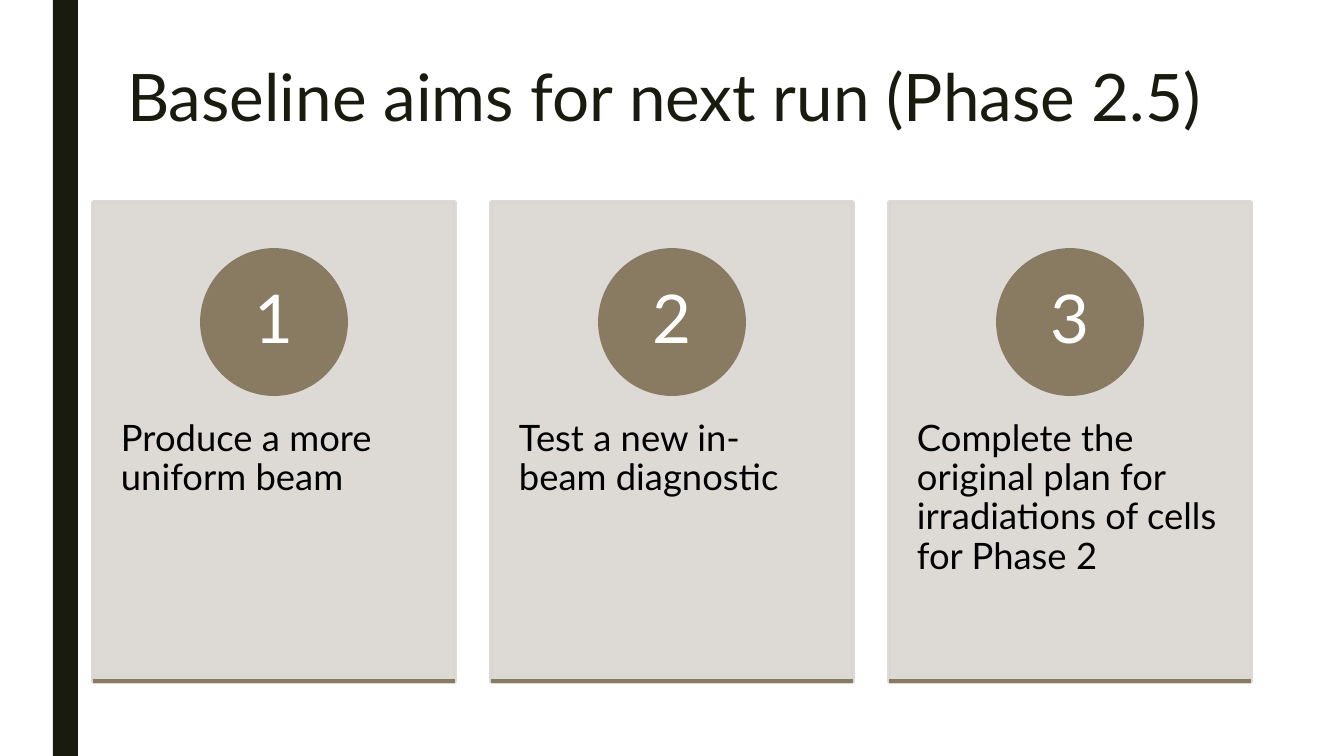
import pptx
import pptx.util
import pptx.dml.color
import pptx.enum.shapes
import pptx.enum.text
import pptx.oxml
import pptx.oxml.ns
import lxml.etree

# Content
TITLE = "Baseline aims for next run (Phase 2.5) "
AIMS = [
    "Produce a more uniform beam",
    "Test a new in-beam diagnostic",
    "Complete the original plan for irradiations of cells for Phase 2",
]
COLOURS = {
    "dark": "191B0E",
    "card": "DAD7D2",
    "accent": "897B61",
    "body": "000000",
    "number": "FFFFFF",
}
FONT = "Lato"

# Layout in px
PAGE_WIDTH, PAGE_HEIGHT = 1344, 756
CARD_LEFT, CARD_TOP, CARD_WIDTH, CARD_HEIGHT = 93, 202, 362, 480
CARD_PITCH = 398
CIRCLE_TOP, CIRCLE_SIZE = 250, 144
BODY_TOP, BODY_HEIGHT = 384, 288
LINE_WIDTH = pptx.util.Pt(2.75)

SHAPES = pptx.enum.shapes.MSO_SHAPE
ANCHORS = pptx.enum.text.MSO_ANCHOR
ALIGNMENTS = pptx.enum.text.PP_ALIGN


def px(length):
    return pptx.util.Emu(round(length * 914400 / 100.8))


def colour(name):
    return pptx.dml.color.RGBColor.from_string(COLOURS[name])


def add_filled(page, kind, left, top, width, height, fill, outlined=True):
    box = page.shapes.add_shape(kind, px(left), px(top), px(width), px(height))
    box.shadow.inherit = False
    box.fill.solid()
    box.fill.fore_color.rgb = colour(fill)
    if outlined:
        box.line.color.rgb = colour(fill)
        box.line.width = LINE_WIDTH
    else:
        box.line.fill.background()
    return box


def set_opacity(box, percent):
    for value in box._element.spPr.iter(pptx.oxml.ns.qn("a:srgbClr")):
        alpha = lxml.etree.SubElement(value, pptx.oxml.ns.qn("a:alpha"))
        alpha.set("val", str(percent * 1000))


def write(box, text, size, name, align, anchor, insets, spacing=0.9):
    frame = box.text_frame
    frame.word_wrap = True
    frame.auto_size = pptx.enum.text.MSO_AUTO_SIZE.NONE
    frame.vertical_anchor = anchor
    frame.margin_left = frame.margin_right = px(insets[0])
    frame.margin_top = frame.margin_bottom = px(insets[1])
    para = frame.paragraphs[0]
    para.alignment = align
    para.line_spacing = spacing
    span = para.add_run()
    span.text = text
    span.font.size = pptx.util.Pt(size)
    span.font.name = FONT
    span.font.color.rgb = colour(name)


def add_card(page, number, text):
    left = CARD_LEFT + (number - 1) * CARD_PITCH
    card = add_filled(page, SHAPES.RECTANGLE, left, CARD_TOP,
                      CARD_WIDTH, CARD_HEIGHT, "card")
    set_opacity(card, 90)

    body = page.shapes.add_textbox(px(left), px(BODY_TOP),
                                   px(CARD_WIDTH), px(BODY_HEIGHT))
    write(body, text, 26, "body", ALIGNMENTS.LEFT, ANCHORS.TOP, (28, 36))

    circle_left = left + (CARD_WIDTH - CIRCLE_SIZE) / 2
    circle = add_filled(page, SHAPES.OVAL, circle_left, CIRCLE_TOP,
                        CIRCLE_SIZE, CIRCLE_SIZE, "accent")
    write(circle, str(number), 48, "number", ALIGNMENTS.CENTER,
          ANCHORS.MIDDLE, (11, 1))

    bottom = px(CARD_TOP + CARD_HEIGHT - 1)
    rule = page.shapes.add_connector(
        pptx.enum.shapes.MSO_CONNECTOR.STRAIGHT,
        px(left), bottom, px(left + CARD_WIDTH), bottom)
    rule.line.color.rgb = colour("accent")
    rule.line.width = LINE_WIDTH
    lxml.etree.SubElement(rule._element.spPr, pptx.oxml.ns.qn("a:effectLst"))


def main():
    deck = pptx.Presentation()
    deck.slide_width, deck.slide_height = px(PAGE_WIDTH), px(PAGE_HEIGHT)
    page = deck.slides.add_slide(deck.slide_layouts[5])

    # Side bar
    add_filled(page, SHAPES.RECTANGLE, 53, 0, 25, PAGE_HEIGHT, "dark",
               outlined=False)

    # Title
    title = page.shapes.title
    title.left, title.top = px(CARD_LEFT), px(61)
    title.width, title.height = px(1159), px(125)
    write(title, TITLE, 46.8, "dark", ALIGNMENTS.CENTER, ANCHORS.TOP,
          (10, 5), 0.89)

    # Numbered cards
    for number, text in enumerate(AIMS, start=1):
        add_card(page, number, text)

    deck.save("out.pptx")


if __name__ == "__main__":
    main()
